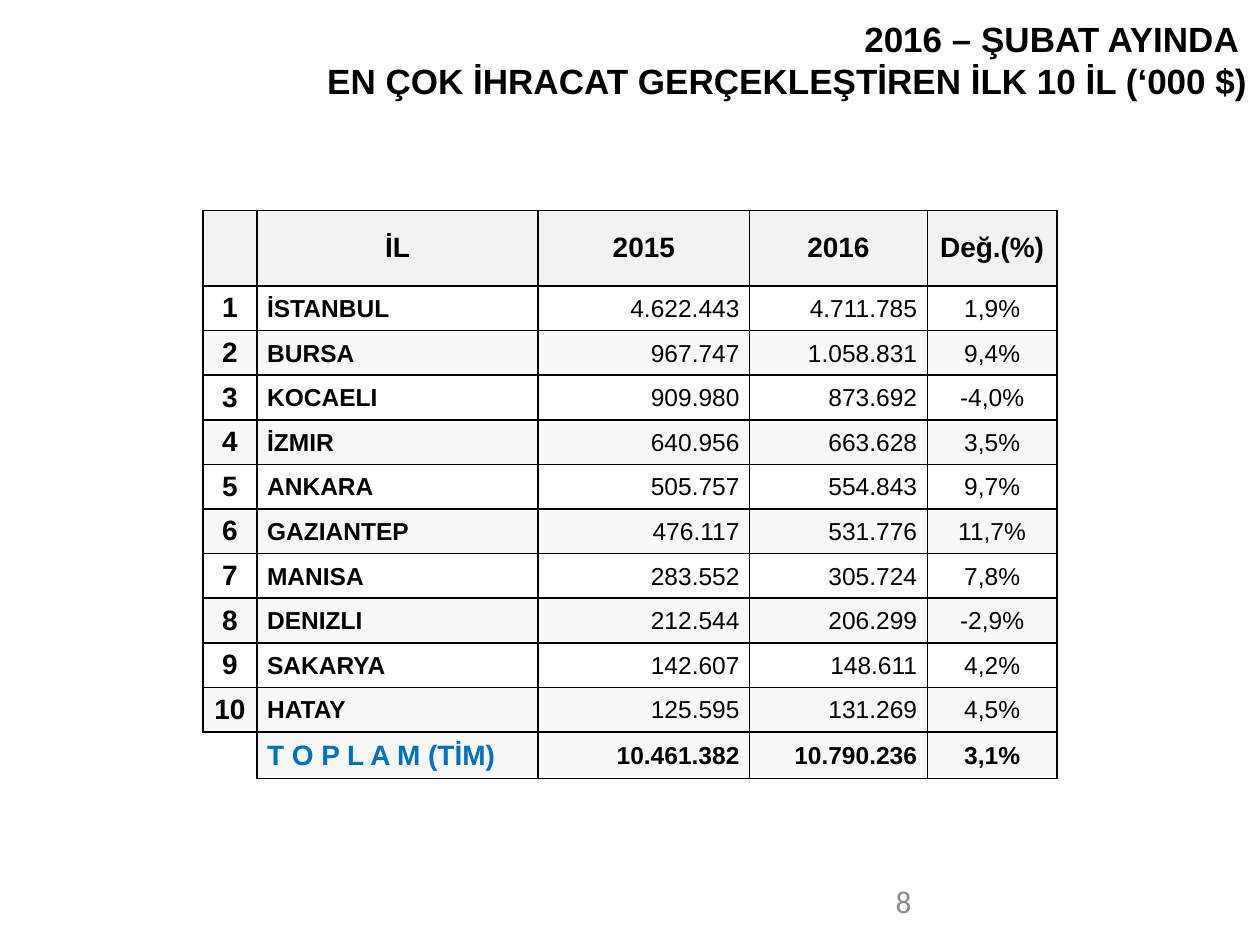
from pptx import Presentation
from pptx.dml.color import RGBColor
from pptx.enum.text import MSO_ANCHOR, PP_ALIGN as Align
from pptx.oxml import parse_xml
from pptx.oxml.ns import nsdecls
from pptx.util import Inches, Pt

COLORS = {
    "text": "000000",
    "total": "0070C0",
    "page": "8C8C8C",
    "header": "F2F2F2",
    "band": "F8F8F8",
    "border": "000000",
}

HEADERS = ["", "İL", "2015", "2016", "Değ.(%)"]
CITIES = [
    ("İSTANBUL", "4.622.443", "4.711.785", "1,9%"),
    ("BURSA", "967.747", "1.058.831", "9,4%"),
    ("KOCAELI", "909.980", "873.692", "-4,0%"),
    ("İZMIR", "640.956", "663.628", "3,5%"),
    ("ANKARA", "505.757", "554.843", "9,7%"),
    ("GAZIANTEP", "476.117", "531.776", "11,7%"),
    ("MANISA", "283.552", "305.724", "7,8%"),
    ("DENIZLI", "212.544", "206.299", "-2,9%"),
    ("SAKARYA", "142.607", "148.611", "4,2%"),
    ("HATAY", "125.595", "131.269", "4,5%"),
]
TOTAL = ("", "T O P L A M (TİM)", "10.461.382", "10.790.236", "3,1%")

COL_WIDTHS = [0.43, 2.23, 1.68, 1.41, 1.03]
COL_ALIGNS = [Align.CENTER, Align.LEFT, Align.RIGHT, Align.RIGHT, Align.CENTER]
# Cell insets per column: left, top, right, bottom
COL_INSETS = [
    (0, 0, 0, 0),
    (0.08, 0.01, 0.01, 0),
    (0.01, 0.01, 0.08, 0),
    (0.01, 0.01, 0.08, 0),
    (0.01, 0.01, 0.01, 0),
]
HEADER_INSETS = (0.1, 0.05, 0.1, 0.05)
HEADER_HEIGHT, CITIES_HEIGHT, TOTAL_HEIGHT = 0.6, 3.54, 0.37


def write(p, text, size=14, bold=False, color="text", font="Arial", align=Align.LEFT):
    """Add one formatted run to a paragraph."""
    p.alignment = align
    r = p.add_run()
    r.text = text
    r.font.name = font
    r.font.size = Pt(size)
    r.font.bold = bold
    r.font.color.rgb = RGBColor.from_string(COLORS[color])


class Deck:
    def __init__(self, width, height):
        self.prs = Presentation()
        self.prs.slide_width, self.prs.slide_height = Inches(width), Inches(height)
        self.slide = self.prs.slides.add_slide(self.prs.slide_layouts[6])

    def text(self, x, y, w, h, lines, anchor=MSO_ANCHOR.TOP, **fmt):
        box = self.slide.shapes.add_textbox(Inches(x), Inches(y), Inches(w), Inches(h))
        tf = box.text_frame
        tf.word_wrap = True
        tf.vertical_anchor = anchor
        for i, line in enumerate(lines):
            write(tf.add_paragraph() if i else tf.paragraphs[0], line, **fmt)

    def table(self, x, y, widths, heights):
        frame = self.slide.shapes.add_table(
            len(heights), len(widths), Inches(x), Inches(y),
            Inches(sum(widths)), Inches(sum(heights)))
        table = frame.table
        table.first_row = table.horz_banding = False
        for col, w in zip(table.columns, widths):
            col.width = Inches(w)
        for row, h in zip(table.rows, heights):
            row.height = Inches(h)
        return table

    def cell(self, cell, text, insets, fill=None, sides="LRTB", **fmt):
        (cell.margin_left, cell.margin_top,
         cell.margin_right, cell.margin_bottom) = map(Inches, insets)
        cell.vertical_anchor = MSO_ANCHOR.MIDDLE
        if text:
            write(cell.text_frame.paragraphs[0], text, **fmt)
        # Borders come before the fill in the cell properties
        tc_pr = cell._tc.get_or_add_tcPr()
        for side in "LRTB":
            if side in sides:
                width = Pt(1)
                paint = f'<a:solidFill><a:srgbClr val="{COLORS["border"]}"/></a:solidFill>'
            else:
                width, paint = 0, "<a:noFill/>"
            tc_pr.append(parse_xml(
                f'<a:ln{side} {nsdecls("a")} w="{width}">{paint}</a:ln{side}>'))
        if fill:
            cell.fill.solid()
            cell.fill.fore_color.rgb = RGBColor.from_string(COLORS[fill])
        else:
            cell.fill.background()


def main():
    deck = Deck(10, 7.5)

    # Page number and title
    deck.text(7.01, 6.95, 2.1, 0.4, ["8"], anchor=MSO_ANCHOR.MIDDLE,
              size=18, color="page", font="Calibri")
    deck.text(1.06, 0.09, 8.94, 0.77,
              ["2016 – ŞUBAT AYINDA ",
               "EN ÇOK İHRACAT GERÇEKLEŞTİREN İLK 10 İL (‘000 $)"],
              size=20, bold=True, align=Align.RIGHT)

    # Export table
    city_height = CITIES_HEIGHT / len(CITIES)
    heights = [HEADER_HEIGHT, *[city_height] * len(CITIES), TOTAL_HEIGHT]
    table = deck.table(1.61, 1.67, COL_WIDTHS, heights)

    # Header row
    for c, label in enumerate(HEADERS):
        deck.cell(table.cell(0, c), label, HEADER_INSETS, fill="header",
                  size=16, bold=True, align=Align.CENTER)

    # Ranked cities
    for rank, city in enumerate(CITIES, 1):
        for c, value in enumerate((str(rank), *city)):
            deck.cell(table.cell(rank, c), value, COL_INSETS[c],
                      fill=None if rank % 2 else "band",
                      size=14 if c else 16, bold=c < 2, align=COL_ALIGNS[c])

    # Total row, open at the lower left corner
    for c, value in enumerate(TOTAL):
        deck.cell(table.cell(len(heights) - 1, c), value, COL_INSETS[c],
                  fill="band" if c else None, sides="LRTB" if c else "TR",
                  size=16 if c == 1 else 14, bold=True,
                  color="total" if c == 1 else "text", align=COL_ALIGNS[c])

    deck.prs.save("out.pptx")


if __name__ == "__main__":
    main()
